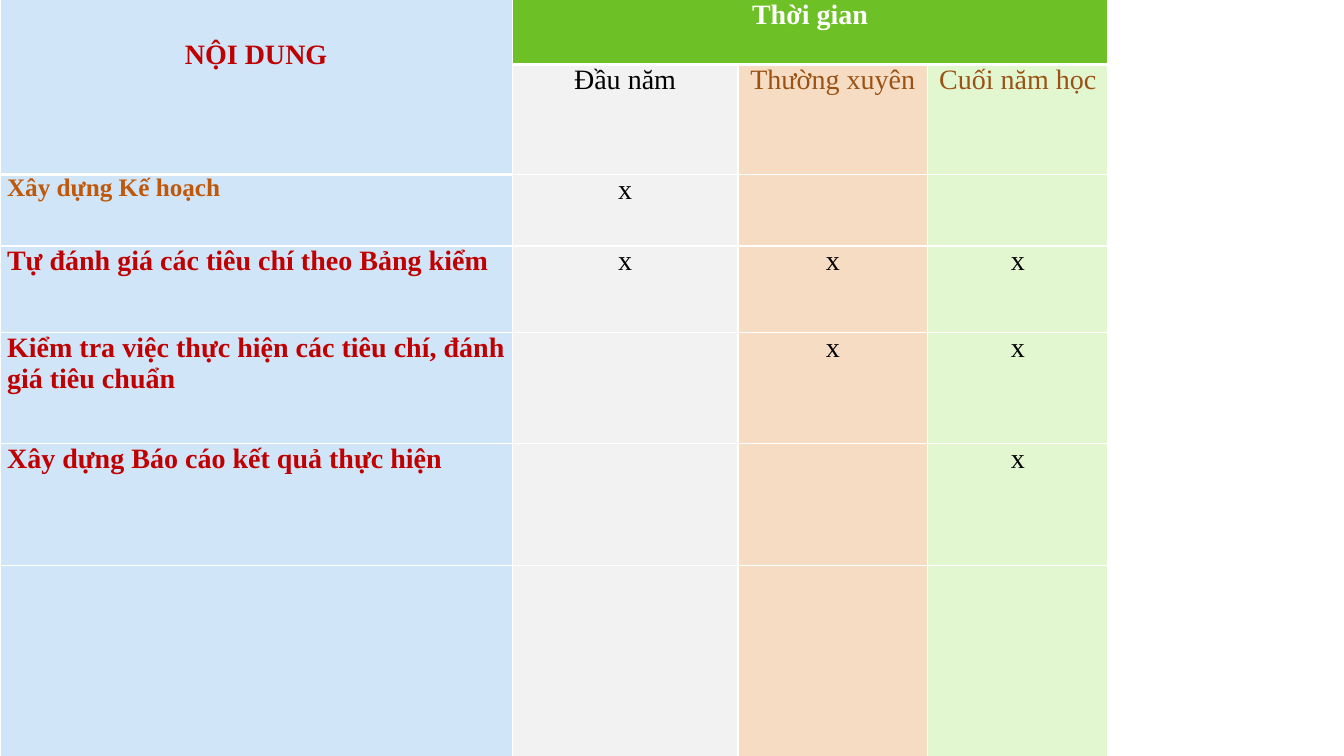
"""Build the slide with the timetable of self-assessment tasks."""
from lxml.etree import SubElement as Sub
from pptx import Presentation
from pptx.dml.color import RGBColor as RGB
from pptx.enum.text import PP_ALIGN as Align
from pptx.oxml.ns import qn
from pptx.util import Inches, Pt

WHITE = RGB(0xFF, 0xFF, 0xFF)
BLACK = RGB(0x00, 0x00, 0x00)
RED = RGB(0xC0, 0x00, 0x00)
RUST = RGB(0xC0, 0x58, 0x0A)
BROWN = RGB(0x9A, 0x53, 0x15)
GREEN = RGB(0x6D, 0xC0, 0x25)
FILLS = [RGB(0xD1, 0xE5, 0xF9), RGB(0xF2, 0xF2, 0xF2),
         RGB(0xF7, 0xDC, 0xC4), RGB(0xE2, 0xF6, 0xD0)]

COLS = [5.08, 2.24, 1.88, 1.79]
ROWS = [0.65, 1.09, 0.71, 0.86, 1.1, 1.21, 1.91]
THICK = {(0, 0), (0, 1), (0, 2), (0, 3), (1, 0)}
TIMES = [("Đầu năm", BLACK), ("Thường xuyên", BROWN), ("Cuối năm học", BROWN)]
TASKS = [
    ("Xây dựng Kế hoạch", 18, RUST, [1]),
    ("Tự đánh giá các tiêu chí theo Bảng kiểm", 20, RED, [1, 2, 3]),
    ("Kiểm tra việc thực hiện các tiêu chí, đánh giá tiêu chuẩn", 20, RED, [2, 3]),
    ("Xây dựng Báo cáo kết quả thực hiện", 20, RED, [3]),
]


def edge(cell, side, width):
    """Draw one white border of a cell."""
    line = Sub(cell._tc.get_or_add_tcPr(), qn(f"a:ln{side}"), w=str(Pt(width)))
    fill = Sub(line, qn("a:solidFill"))
    Sub(fill, qn("a:srgbClr"), val=str(WHITE))


def paint(cell, row, col):
    """Set the borders, fill and margins of a cell."""
    edge(cell, "L", 1)
    edge(cell, "R", 1)
    edge(cell, "T", 3 if (row - 1, col) in THICK else 1)
    edge(cell, "B", 3 if (row, col) in THICK else 1)
    cell.fill.solid()
    cell.fill.fore_color.rgb = GREEN if row == 0 and col else FILLS[col]
    cell.margin_left = cell.margin_right = Inches(0.07)
    cell.margin_top = cell.margin_bottom = 0


def write(cell, text, color, bold=False, size=20, align=Align.CENTER):
    """Put one styled paragraph in a cell."""
    para = cell.text_frame.paragraphs[0]
    para.text = text
    para.alignment = align
    para.space_after = Pt(6)
    font = para.font
    font.name, font.size, font.bold = "Times New Roman", Pt(size), bold
    font.color.rgb = color


def grid(slide):
    """Add the painted table with its merged headings."""
    table = slide.shapes.add_table(
        len(ROWS), len(COLS), 0, Inches(-0.01),
        Inches(sum(COLS)), Inches(sum(ROWS))).table
    table.first_row = table.horz_banding = False
    for col, width in enumerate(COLS):
        table.columns[col].width = Inches(width)
    for row, height in enumerate(ROWS):
        table.rows[row].height = Inches(height)
        for col in range(len(COLS)):
            paint(table.cell(row, col), row, col)
    table.cell(0, 0).merge(table.cell(1, 0))
    table.cell(0, 1).merge(table.cell(0, 3))
    return table


def heads(table):
    """Write the two heading rows."""
    topic = table.cell(0, 0)
    topic.margin_top = Inches(0.4)
    write(topic, "NỘI DUNG", RED, bold=True)
    write(table.cell(0, 1), "Thời gian", WHITE, bold=True)
    for col, (text, color) in enumerate(TIMES, 1):
        write(table.cell(1, col), text, color)


def tasks(table):
    """Write each task and mark its times."""
    for row, (text, size, color, marks) in enumerate(TASKS, 2):
        write(table.cell(row, 0), text, color, True, size, Align.JUSTIFY)
        for col in marks:
            write(table.cell(row, col), "x", BLACK)


def main():
    """Build and save the slide."""
    deck = Presentation()
    deck.slide_width, deck.slide_height = Inches(13.33), Inches(7.5)
    slide = deck.slides.add_slide(deck.slide_layouts[6])
    table = grid(slide)
    heads(table)
    tasks(table)
    deck.save("out.pptx")


if __name__ == "__main__":
    main()
